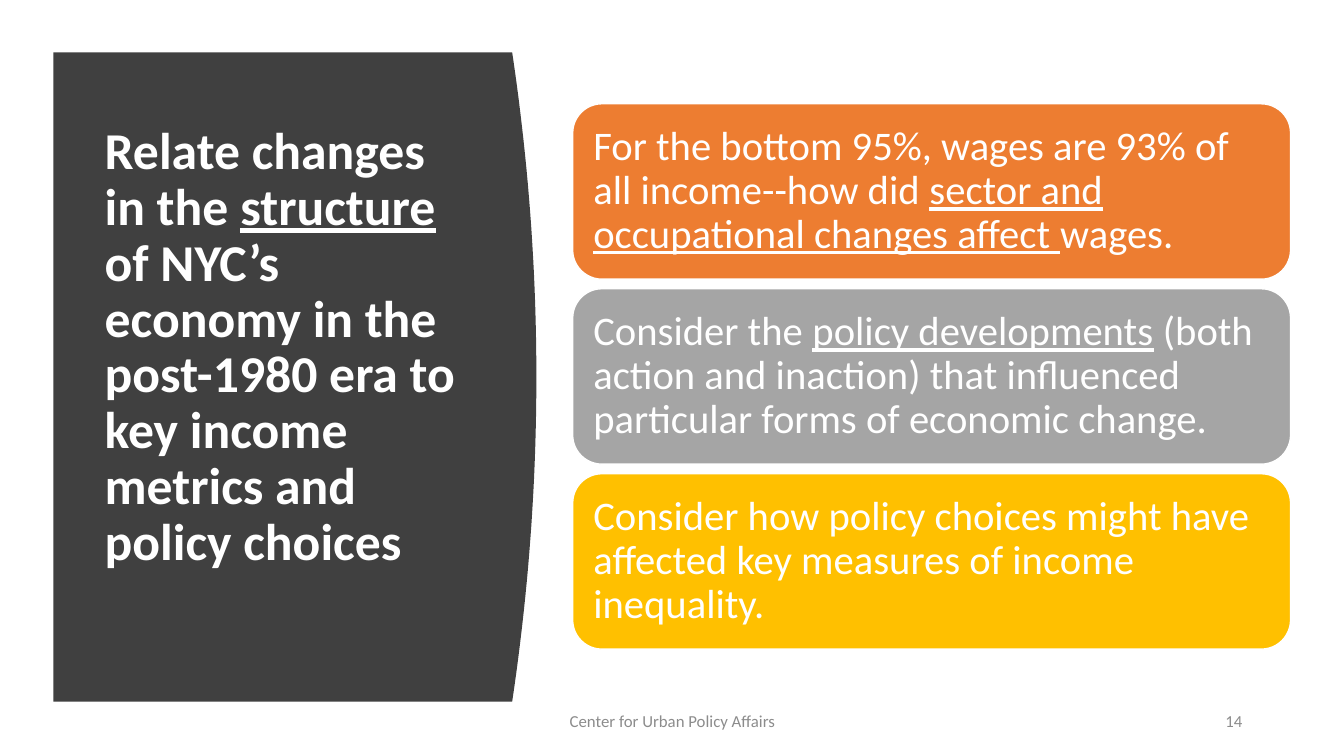
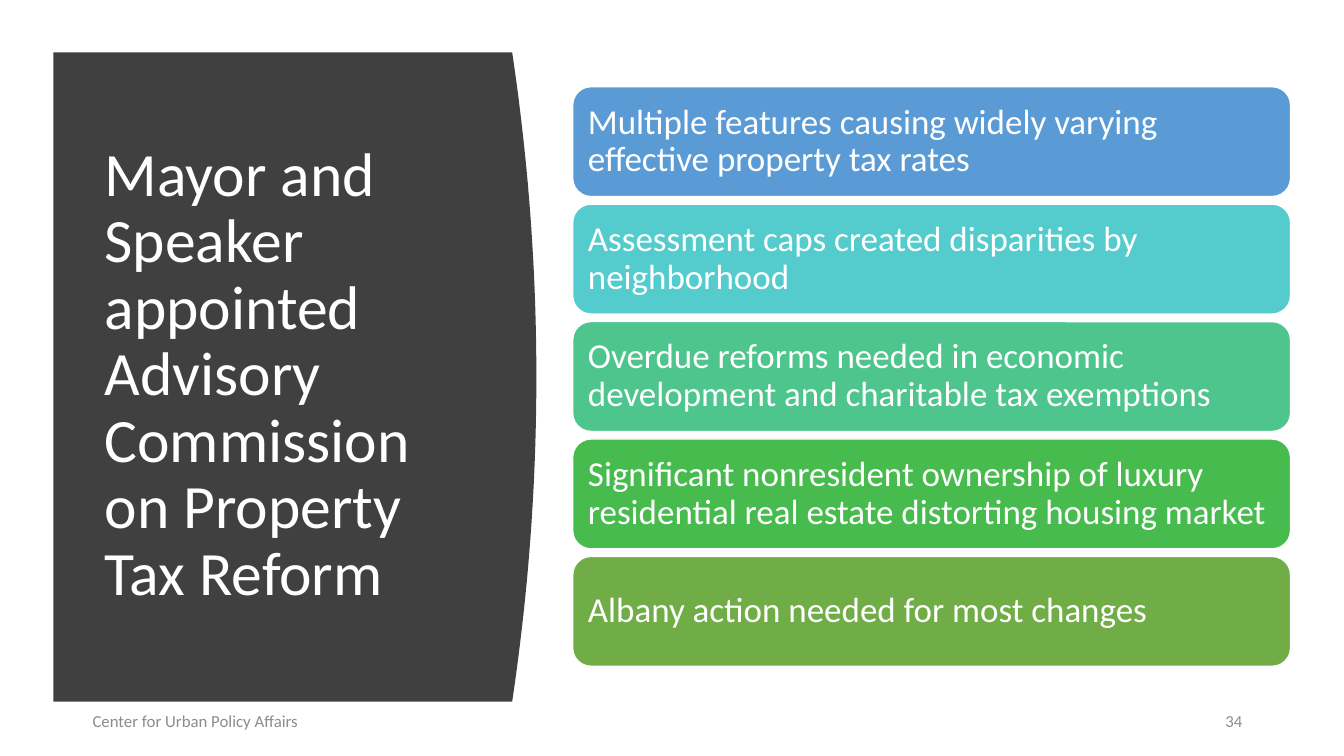
from dataclasses import dataclass

from pptx import Presentation
from pptx import util as u
from pptx.dml.color import RGBColor
from pptx.enum import shapes, text

FONT = "Calibri"
WHITE, PANEL_GRAY, FOOTER_GRAY = "FFFFFF", "404040", "8C8C8C"
FOOTER = "Center for Urban Policy Affairs"
PANEL_LEFT, PANEL_TOP, PANEL_BOTTOM = 0.53, 0.52, 6.96
PANEL_CORNER, PANEL_BULGE = 5.08, 0.24
CURVE_STEPS = 44
CARD_LEFT, CARD_WIDTH = 5.68, 7.12
FOOTER_TOP, FOOTER_HEIGHT = 6.95, 0.4


@dataclass
class Card:
    wording: str
    fill: str


@dataclass
class Topic:
    title: str
    title_size: float
    title_bold: bool
    title_bottom_inset: float
    cards: list[Card]
    cards_top: float
    cards_bottom: float
    card_height: float
    card_inset: float
    card_size: float
    footer_left: float
    footer_align: text.PP_ALIGN
    number: str


TOPICS = [
    Topic(
        title="Relate changes in the _structure_ of NYC’s economy in the post-1980 era "
              "to key income metrics and policy choices",
        title_size=36.9, title_bold=True, title_bottom_inset=0.6,
        cards=[
            Card("For the bottom 95%, wages are 93% of all income--how did "
                 "_sector and occupational changes affect _wages.", "ED7D31"),
            Card("Consider the _policy developments_ (both action and inaction) that "
                 "influenced particular forms of economic change.", "A5A5A5"),
            Card("Consider how policy choices might have affected key measures of "
                 "income inequality.", "FFC000"),
        ],
        cards_top=1.03, cards_bottom=6.44, card_height=1.74, card_inset=0.12, card_size=29,
        footer_left=4.42, footer_align=text.PP_ALIGN.CENTER, number="14",
    ),
    Topic(
        title="Mayor and Speaker appointed Advisory Commission on Property Tax Reform",
        title_size=44, title_bold=False, title_bottom_inset=0.05,
        cards=[
            Card("Multiple features causing widely varying effective property tax rates", "5B9BD5"),
            Card("Assessment caps created disparities by neighborhood", "54CCCD"),
            Card("Overdue reforms needed in economic development and charitable tax "
                 "exemptions", "4DC58D"),
            Card("Significant nonresident ownership of luxury residential real estate "
                 "distorting housing market", "48BB4F"),
            Card("Albany action needed for most changes", "70AD47"),
        ],
        cards_top=0.86, cards_bottom=6.61, card_height=1.09, card_inset=0.1, card_size=25,
        footer_left=0.82, footer_align=text.PP_ALIGN.LEFT, number="34",
    ),
]


def rgb(value: str) -> RGBColor:
    return RGBColor.from_string(value)


def write(frame, wording: str, size: float, color: str = WHITE, bold: bool = False,
          align=text.PP_ALIGN.LEFT, line_spacing: float = 1.0) -> None:
    frame.word_wrap = True
    frame.vertical_anchor = text.MSO_ANCHOR.MIDDLE
    paragraph = frame.paragraphs[0]
    paragraph.alignment = align
    paragraph.line_spacing = line_spacing
    paragraph.font.name = FONT
    paragraph.font.size = u.Pt(size)
    paragraph.font.bold = bold
    paragraph.font.color.rgb = rgb(color)
    for index, part in enumerate(wording.split("_")):
        run = paragraph.add_run()
        run.text = part
        if index % 2:
            run.font.underline = True


def add_label(slide, left: float, top: float, width: float, height: float):
    box = slide.shapes.add_textbox(u.Inches(left), u.Inches(top), u.Inches(width), u.Inches(height))
    return box.text_frame


def draw_panel(slide) -> None:
    middle = (PANEL_TOP + PANEL_BOTTOM) / 2
    half = (PANEL_BOTTOM - PANEL_TOP) / 2
    edge = []
    for step in range(CURVE_STEPS + 1):
        offset = 2 * step / CURVE_STEPS - 1
        x = PANEL_CORNER + PANEL_BULGE * (1 - offset ** 2)
        edge.append((u.Inches(x), u.Inches(middle + half * offset)))
    outline = slide.shapes.build_freeform(u.Inches(PANEL_LEFT), u.Inches(PANEL_TOP))
    outline.add_line_segments(edge + [(u.Inches(PANEL_LEFT), u.Inches(PANEL_BOTTOM))], close=True)
    panel = outline.convert_to_shape()
    panel.shadow.inherit = False
    panel.fill.solid()
    panel.fill.fore_color.rgb = rgb(PANEL_GRAY)
    panel.line.fill.background()


def draw_title(slide, topic: Topic) -> None:
    frame = add_label(slide, 0.94, 1.11, 3.74, 5.24)
    frame.margin_bottom = u.Inches(topic.title_bottom_inset)
    write(frame, topic.title, topic.title_size, bold=topic.title_bold, line_spacing=0.9)


def draw_cards(slide, topic: Topic) -> None:
    span = topic.cards_bottom - topic.cards_top - topic.card_height
    pitch = span / (len(topic.cards) - 1)
    for index, card in enumerate(topic.cards):
        tile = slide.shapes.add_shape(
            shapes.MSO_SHAPE.ROUNDED_RECTANGLE,
            u.Inches(CARD_LEFT), u.Inches(topic.cards_top + index * pitch),
            u.Inches(CARD_WIDTH), u.Inches(topic.card_height))
        tile.shadow.inherit = False
        tile.fill.solid()
        tile.fill.fore_color.rgb = rgb(card.fill)
        tile.line.color.rgb = rgb(WHITE)
        tile.line.width = u.Pt(1)
        frame = tile.text_frame
        frame.margin_left = frame.margin_right = u.Inches(topic.card_inset)
        frame.margin_top = frame.margin_bottom = u.Inches(topic.card_inset)
        write(frame, card.wording, topic.card_size, line_spacing=0.9)


def draw_footer(slide, topic: Topic) -> None:
    write(add_label(slide, topic.footer_left, FOOTER_TOP, 4.5, FOOTER_HEIGHT),
          FOOTER, 12, FOOTER_GRAY, align=topic.footer_align)
    write(add_label(slide, 9.42, FOOTER_TOP, 3, FOOTER_HEIGHT),
          topic.number, 12, FOOTER_GRAY, align=text.PP_ALIGN.RIGHT)


def main() -> None:
    deck = Presentation()
    deck.slide_width, deck.slide_height = u.Inches(13.33), u.Inches(7.5)
    for topic in TOPICS:
        slide = deck.slides.add_slide(deck.slide_layouts[6])
        draw_panel(slide)
        draw_title(slide, topic)
        draw_cards(slide, topic)
        draw_footer(slide, topic)
    deck.save("out.pptx")


if __name__ == "__main__":
    main()
